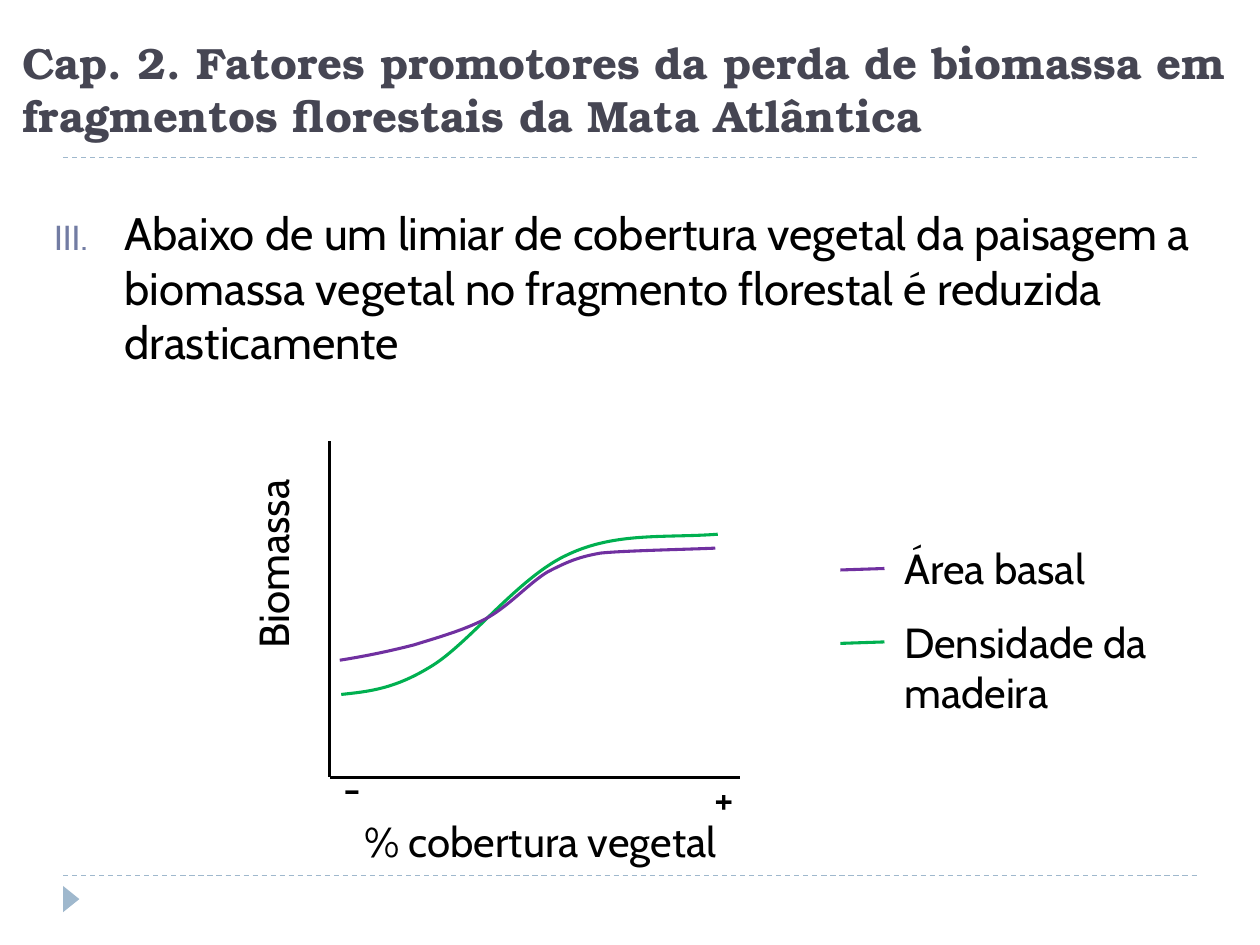
import lxml.etree
import pptx
import pptx.dml.color
import pptx.enum.dml
import pptx.enum.shapes
import pptx.enum.text
import pptx.oxml.ns
import pptx.util

Cm = pptx.util.Cm
Pt = pptx.util.Pt
RGBColor = pptx.dml.color.RGBColor
qn = pptx.oxml.ns.qn

BLACK = RGBColor(0x00, 0x00, 0x00)
TITLE_GRAY = RGBColor(0x46, 0x46, 0x53)
NUMBER_BLUE = RGBColor(0x72, 0x7C, 0xA3)
RULE_BLUE = RGBColor(0x9F, 0xB8, 0xCD)
GREEN = RGBColor(0x00, 0xB0, 0x50)
PURPLE = RGBColor(0x70, 0x30, 0xA0)

BODY_FONT = "Cabin"
TITLE_FONT = "TeX Gyre Bonum"

# Bézier points in cm from the top of the vertical axis: a start, then three per segment.
WOOD_DENSITY_CURVE = [
    (7.82, 1.88),
    (6.78, 1.96), (5.77, 1.83), (4.8, 2.29),
    (3.84, 2.72), (2.84, 4.04), (2.08, 4.52),
    (1.32, 5), (0.79, 5.05), (0.23, 5.11),
]
BASAL_AREA_CURVE = [
    (7.77, 2.16),
    (7.42, 2.18), (5.94, 2.21), (5.46, 2.26),
    (5, 2.34), (4.78, 2.44), (4.39, 2.64),
    (4.01, 2.87), (3.61, 3.33), (3.15, 3.58),
    (2.72, 3.81), (2.18, 3.96), (1.7, 4.11),
    (1.19, 4.24), (0.71, 4.34), (0.2, 4.42),
]


def add_text(slide, text, left, top, width, height, size=24, font=BODY_FONT,
             color=BLACK, wrap=True):
    box = slide.shapes.add_textbox(Cm(left), Cm(top), Cm(width), Cm(height))
    box.text_frame.word_wrap = wrap
    paragraph = box.text_frame.paragraphs[0]
    paragraph.text = text
    paragraph.font.name = font
    paragraph.font.size = Pt(size)
    paragraph.font.color.rgb = color
    return box


def add_line(slide, start, end, color, width=1.75):
    line = slide.shapes.add_connector(
        pptx.enum.shapes.MSO_CONNECTOR.STRAIGHT,
        *(Cm(value) for value in (*start, *end)))
    line.line.color.rgb = color
    line.line.width = Pt(width)
    properties = line._element.find(qn("p:spPr"))
    lxml.etree.SubElement(properties, qn("a:effectLst"))
    return line


def add_curve(slide, left, top, points, color):
    """Draw a freeform and turn each three line segments into one Bézier segment."""
    (start_x, start_y), *others = [(Cm(left + x), Cm(top + y)) for x, y in points]
    builder = slide.shapes.build_freeform(start_x, start_y)
    builder.add_line_segments(others, close=False)
    curve = builder.convert_to_shape()
    outline = curve._element.find(".//" + qn("a:path"))
    segments = outline.findall(qn("a:lnTo"))
    for index in range(0, len(segments), 3):
        bezier = lxml.etree.SubElement(outline, qn("a:cubicBezTo"))
        for segment in segments[index:index + 3]:
            bezier.append(segment[0])
            outline.remove(segment)
    curve.shadow.inherit = False
    curve.fill.background()
    curve.line.color.rgb = color
    curve.line.width = Pt(1.75)


def number_paragraph(paragraph, start, indent):
    """Give the paragraph a Roman number with a hanging indent in cm."""
    properties = paragraph._p.get_or_add_pPr()
    properties.set("marL", str(Cm(indent)))
    properties.set("indent", str(-Cm(indent)))
    color = lxml.etree.Element(qn("a:buClr"))
    lxml.etree.SubElement(color, qn("a:srgbClr"), val=str(NUMBER_BLUE))
    parts = [
        color,
        lxml.etree.Element(qn("a:buSzPct"), val="76000"),
        lxml.etree.Element(qn("a:buFont"), typeface="+mj-lt"),
        lxml.etree.Element(qn("a:buAutoNum"), type="romanUcPeriod", startAt=str(start)),
    ]
    run_defaults = properties.find(qn("a:defRPr"))
    for part in parts:
        run_defaults.addprevious(part)


def add_frame(slide, left, width, top_rule, bottom_rule):
    for y in (bottom_rule, top_rule):
        rule = add_line(slide, (left, y), (left + width, y), RULE_BLUE, 0.75)
        rule.line.dash_style = pptx.enum.dml.MSO_LINE.DASH
    marker = slide.shapes.add_shape(
        pptx.enum.shapes.MSO_SHAPE.ISOSCELES_TRIANGLE,
        Cm(left - 0.1), Cm(bottom_rule + 0.31), Cm(0.53), Cm(0.33))
    marker.rotation = 90
    marker.shadow.inherit = False
    marker.fill.solid()
    marker.fill.fore_color.rgb = RULE_BLUE
    marker.line.fill.background()


def add_title(slide, left, top, width, height):
    title = add_text(
        slide,
        "Cap. 2. Fatores promotores da perda de biomassa em "
        "fragmentos florestais da Mata Atlântica",
        left, top, width, height, 25, TITLE_FONT, TITLE_GRAY)
    title.text_frame.vertical_anchor = pptx.enum.text.MSO_ANCHOR.BOTTOM
    title.text_frame.paragraphs[0].font.bold = True


def add_statement(slide, left, top, width, height):
    statement = add_text(
        slide,
        "Abaixo de um limiar de cobertura vegetal da paisagem a biomassa vegetal "
        "no fragmento florestal é reduzida drasticamente",
        left, top, width, height, 26)
    paragraph = statement.text_frame.paragraphs[0]
    paragraph.space_before = Pt(6)
    number_paragraph(paragraph, start=3, indent=1.42)


def add_graph(slide, left, top, width, height):
    """Draw the two axes along the box, with their labels outside it."""
    bottom = top + height
    add_line(slide, (left, bottom), (left + width, bottom), BLACK)
    add_line(slide, (left, top), (left, bottom), BLACK)
    add_text(slide, "% cobertura vegetal", left + 0.44, bottom + 0.64, 9.86, 1.27)
    vertical_label = add_text(slide, "Biomassa", left - 3.47, top + 1.47, 4.65, 1.27)
    vertical_label.rotation = 270
    add_curve(slide, left, top, WOOD_DENSITY_CURVE, GREEN)
    add_curve(slide, left, top, BASAL_AREA_CURVE, PURPLE)
    add_text(slide, "-", left + 0.03, bottom - 0.43, 0.79, 1.27, wrap=False)
    add_text(slide, "+", left + 7.5, bottom - 0.23, 1.02, 1.27, wrap=False)


def add_legend(slide, left, top, width):
    entries = [("Área basal", PURPLE, 1.27), ("Densidade da madeira", GREEN, 2.31)]
    for row, (label, color, height) in enumerate(entries):
        y = top + 1.48 * row
        add_line(slide, (left, y + 0.67), (left + 0.89, y + 0.64), color)
        add_text(slide, label, left + 1.04, y, width - 1.04, height)


def main():
    presentation = pptx.Presentation()
    presentation.slide_width = Cm(25.4)
    presentation.slide_height = Cm(19.05)
    slide = presentation.slides.add_slide(presentation.slide_layouts[6])
    add_frame(slide, 1.27, 22.86, top_rule=3.18, bottom_rule=17.65)
    add_title(slide, 0.2, 0, 26.24, 2.97)
    add_statement(slide, 0.84, 4.01, 23.7, 4.65)
    add_graph(slide, 6.65, 8.89, 8.26, 6.78)
    add_legend(slide, 16.94, 10.82, 7.59)
    presentation.save("out.pptx")


if __name__ == "__main__":
    main()
